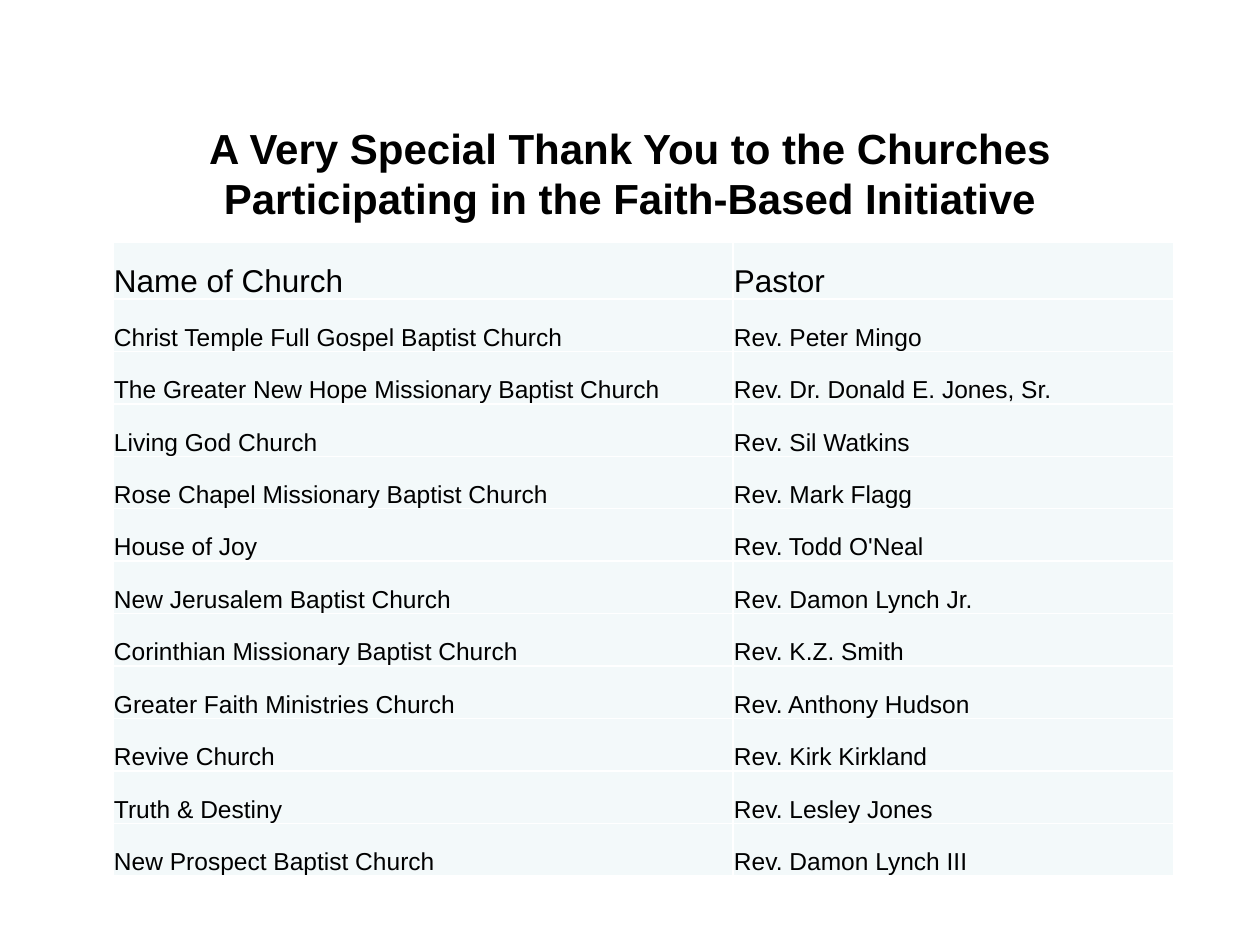
from pptx import Presentation
from pptx.dml.color import RGBColor
from pptx.enum.text import MSO_ANCHOR, PP_ALIGN
from pptx.oxml import parse_xml
from pptx.oxml.ns import nsdecls
from pptx.util import Emu, Pt

BOTTOM = MSO_ANCHOR.BOTTOM
TOP = MSO_ANCHOR.TOP
CENTER = PP_ALIGN.CENTER

PX_PER_INCH = 126
EMU_PER_PX = 914400 / PX_PER_INCH
FONT = "Arial"
COLORS = {"text": "000000", "cell": "F3F9FA", "border": "FFFFFF"}

TITLE = ("A Very Special Thank You to the Churches "
         "Participating in the Faith-Based Initiative")
HEADINGS = ("Name of Church", "Pastor")
CHURCHES = [
    ("Christ Temple Full Gospel Baptist Church", "Rev. Peter Mingo"),
    ("The Greater New Hope Missionary Baptist Church",
     "Rev. Dr. Donald E. Jones, Sr."),
    ("Living God Church", "Rev. Sil Watkins"),
    ("Rose Chapel Missionary Baptist Church", "Rev. Mark Flagg"),
    ("House of Joy", "Rev. Todd O'Neal"),
    ("New Jerusalem Baptist Church", "Rev. Damon Lynch Jr."),
    ("Corinthian Missionary Baptist Church", "Rev. K.Z. Smith"),
    ("Greater Faith Ministries Church", "Rev. Anthony Hudson"),
    ("Revive Church", "Rev. Kirk Kirkland"),
    ("Truth & Destiny", "Rev. Lesley Jones"),
    ("New Prospect Baptist Church", "Rev. Damon Lynch III"),
]
COLUMN_WIDTHS = (620, 441)
HEADING_HEIGHT = 57
BODY_HEIGHT = 577


def px(length):
    return Emu(round(length * EMU_PER_PX))


def set_all(target, values):
    for name, value in values.items():
        setattr(target, name, value)


def style_font(font, size, bold=False):
    set_all(font, {"name": FONT, "size": Pt(size), "bold": bold})
    font.color.rgb = RGBColor.from_string(COLORS["text"])


def add_borders(cell):
    properties = cell._tc.get_or_add_tcPr()
    for position, side in enumerate(("lnL", "lnR", "lnT", "lnB")):
        properties.insert(position, parse_xml(
            f'<a:{side} {nsdecls("a")} w="{Pt(1)}"><a:solidFill>'
            f'<a:srgbClr val="{COLORS["border"]}"/></a:solidFill></a:{side}>'))


def fill_cell(cell, text, size):
    set_all(cell, {"text": text, "vertical_anchor": BOTTOM,
                   "margin_left": px(1), "margin_right": px(1),
                   "margin_top": px(1), "margin_bottom": 0})
    style_font(cell.text_frame.paragraphs[0].runs[0].font, size)
    cell.fill.solid()
    cell.fill.fore_color.rgb = RGBColor.from_string(COLORS["cell"])
    add_borders(cell)


def add_church_table(slide, left, top):
    rows = [HEADINGS, *CHURCHES]
    table = slide.shapes.add_table(
        len(rows), len(HEADINGS), px(left), px(top),
        px(sum(COLUMN_WIDTHS)), px(HEADING_HEIGHT + BODY_HEIGHT)).table
    for column, width in zip(table.columns, COLUMN_WIDTHS):
        column.width = px(width)
    for index, texts in enumerate(rows):
        heading = index == 0
        table.rows[index].height = (
            px(HEADING_HEIGHT) if heading else px(BODY_HEIGHT) // len(CHURCHES))
        for cell, text in zip(table.rows[index].cells, texts):
            fill_cell(cell, text, 18 if heading else 14)


def add_title(slide, left, top, width, height):
    frame = slide.shapes.add_textbox(
        px(left), px(top), px(width), px(height)).text_frame
    set_all(frame, {"word_wrap": True, "vertical_anchor": TOP})
    paragraph = frame.paragraphs[0]
    set_all(paragraph, {"text": TITLE, "alignment": CENTER})
    style_font(paragraph.runs[0].font, 24, bold=True)


def main():
    presentation = Presentation()
    set_all(presentation, {"slide_width": px(1260), "slide_height": px(945)})
    slide = presentation.slides.add_slide(presentation.slide_layouts[6])
    add_church_table(slide, 113, 242)
    add_title(slide, 87, 116, 1086, 126)
    presentation.save("out.pptx")


if __name__ == "__main__":
    main()
